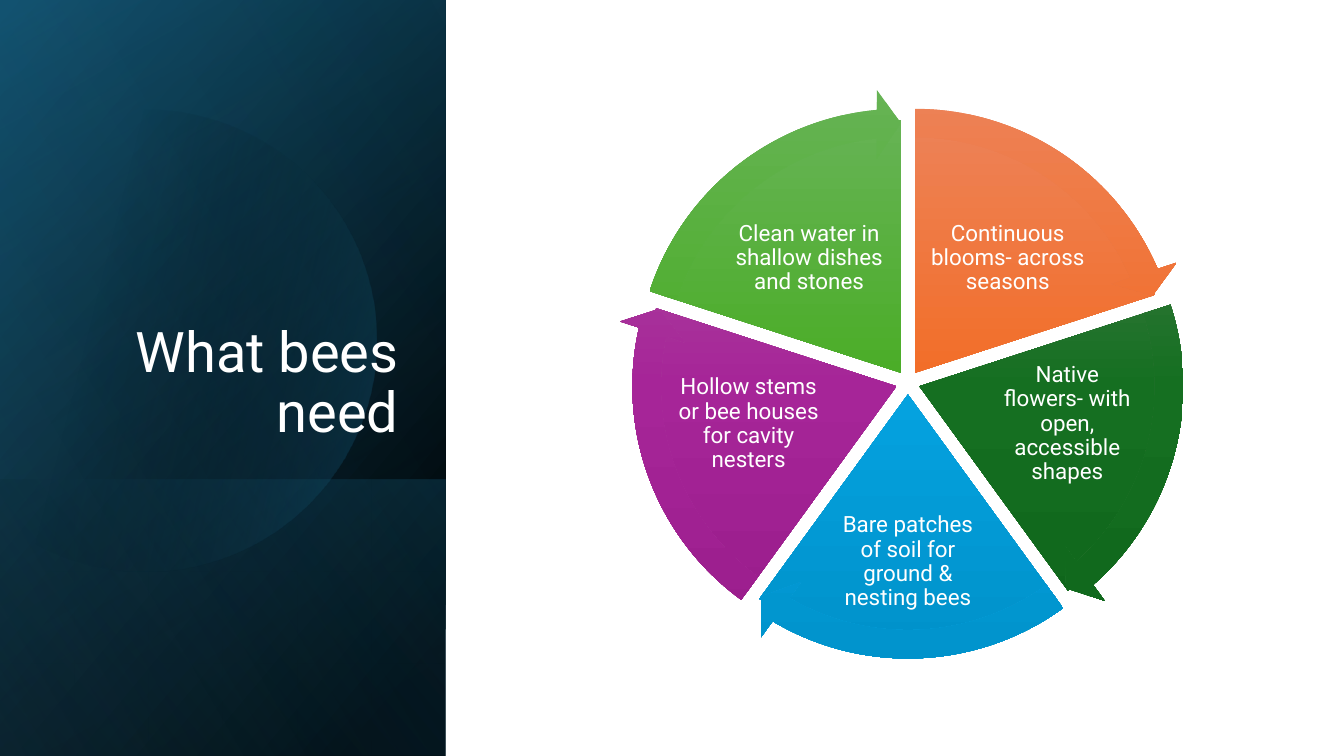
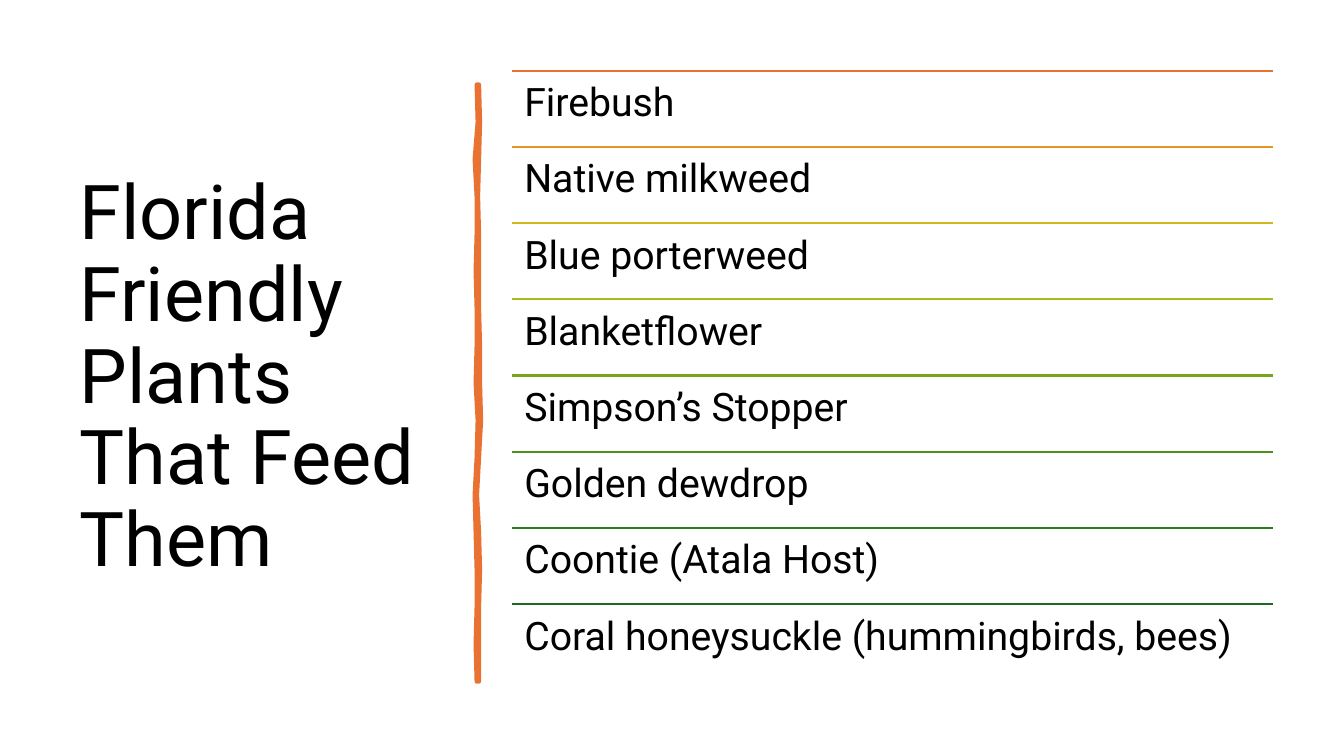
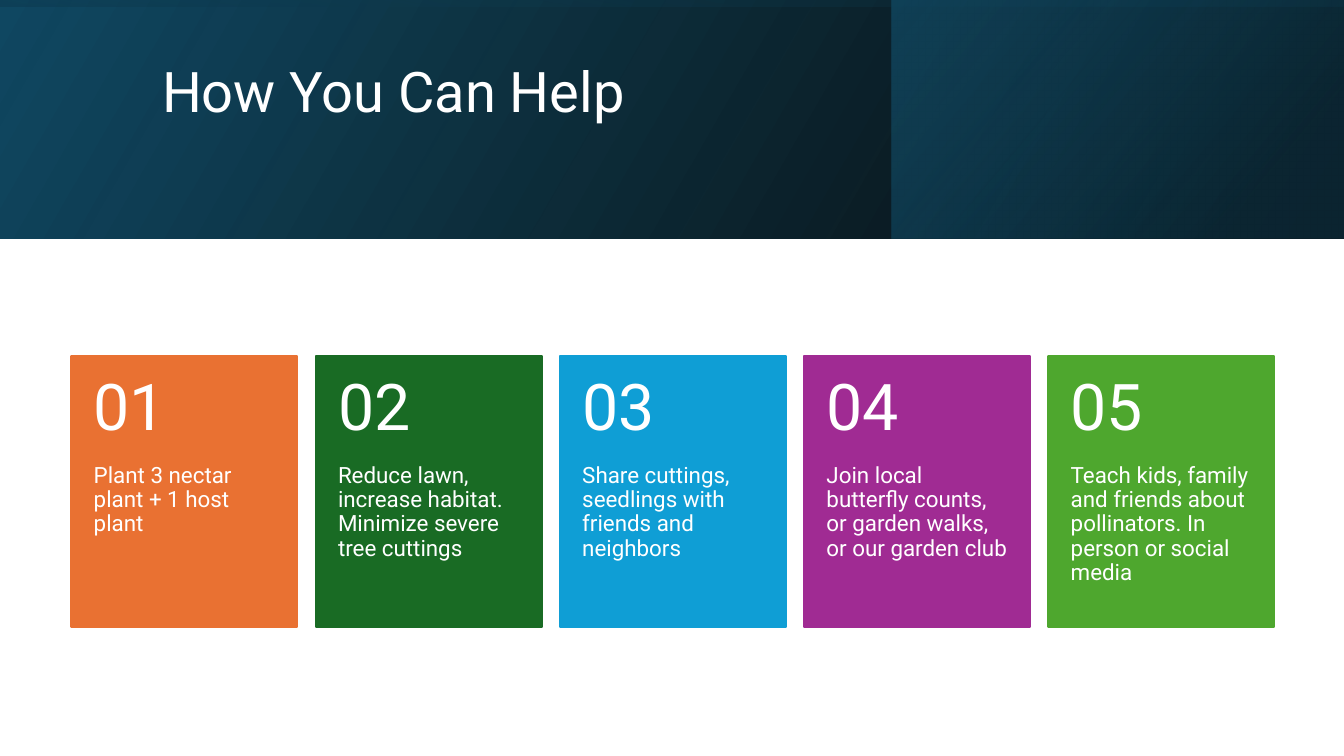
import math

import lxml.etree
import pptx
import pptx.dml.color
import pptx.enum.shapes
import pptx.enum.text
import pptx.oxml.ns
import pptx.util

Inches = pptx.util.Inches
SHAPE = pptx.enum.shapes.MSO_SHAPE
ALIGN = pptx.enum.text.PP_ALIGN
ANCHOR = pptx.enum.text.MSO_ANCHOR
FONT = "Roboto"

COLORS = {
    "white": "FFFFFF",
    "black": "000000",
    "navy": "104862",
    "night": "0B3041",
    "teal": "156082",
    "sky": "46B1E1",
    "orange": "E97132",
    "amber": "E49622",
    "gold": "D2B81E",
    "lime": "ABBC1E",
    "grass": "75A71D",
    "leaf": "49931D",
    "moss": "277F1B",
    "forest": "196B24",
    "blue": "0F9ED5",
    "purple": "A02B93",
    "green": "4EA72E",
    "orange light": "ED8257",
    "orange middle": "F26E29",
    "orange deep": "E25F1A",
    "forest light": "4D7E50",
    "forest middle": "156F21",
    "forest deep": "0F661B",
    "blue light": "4CAADF",
    "blue middle": "05A2DF",
    "blue deep": "0092CB",
    "purple light": "AC53A0",
    "purple middle": "A62598",
    "purple deep": "991C8B",
    "green light": "66B354",
    "green middle": "4BAD28",
    "green deep": "409F1E",
}
ACCENTS = ["orange", "forest", "blue", "purple", "green"]

NEEDS = [
    ("Continuous blooms- across seasons", (9.19, 2.03, 1.61, 1.07)),
    ("Native flowers- with open, accessible shapes", (9.84, 3.61, 1.49, 1.19)),
    ("Bare patches of soil for ground & nesting bees", (8.29, 4.92, 1.43, 1.31)),
    ("Hollow stems or bee houses for cavity nesters", (6.68, 3.61, 1.49, 1.19)),
    ("Clean water in shallow dishes and stones", (7.22, 2.03, 1.61, 1.07)),
]
PLANTS = [
    ("Firebush", "orange"),
    ("Native milkweed", "amber"),
    ("Blue porterweed", "gold"),
    ("Blanketflower", "lime"),
    ("Simpson’s Stopper", "grass"),
    ("Golden dewdrop", "leaf"),
    ("Coontie (Atala Host)", "moss"),
    ("Coral honeysuckle (hummingbirds, bees)", "forest"),
]
ACTIONS = [
    "Plant 3 nectar plant + 1 host plant",
    "Reduce lawn, increase habitat. Minimize severe tree cuttings",
    "Share cuttings, seedlings with friends and neighbors",
    "Join local butterfly counts, or garden walks, or our garden club",
    "Teach kids, family and friends about pollinators. In person or social media",
]


def rgb(name):
    """Return the named colour."""
    return pptx.dml.color.RGBColor.from_string(COLORS[name])


def add_text(slide, text, box, size=16, color="white", align=ALIGN.LEFT,
             anchor=ANCHOR.TOP, insets=(0.1, 0.05, 0.1, 0.05)):
    """Place one formatted paragraph in a wrapped text box."""
    frame = slide.shapes.add_textbox(*map(Inches, box)).text_frame
    frame.word_wrap = True
    frame.vertical_anchor = anchor
    (frame.margin_left, frame.margin_top,
     frame.margin_right, frame.margin_bottom) = map(Inches, insets)
    paragraph = frame.paragraphs[0]
    paragraph.alignment = align
    paragraph.line_spacing = 0.9
    run = paragraph.add_run()
    run.text = text
    run.font.name = FONT
    run.font.size = pptx.util.Pt(size)
    run.font.color.rgb = rgb(color)


def add_title(slide, text, box, size=40, color="white", align=ALIGN.LEFT,
              anchor=ANCHOR.MIDDLE):
    """Place a slide title."""
    add_text(slide, text, box, size=size, color=color, align=align, anchor=anchor)


def fill_gradient(shape, stops, angle):
    """Fill with (position, colour[, opacity]) stops at a clockwise angle."""
    qn = pptx.oxml.ns.qn
    shape.shadow.inherit = False
    shape.line.fill.background()
    shape.fill.gradient()
    gradient = shape.element.spPr.find(qn("a:gradFill"))
    for child in list(gradient):
        gradient.remove(child)
    gradient.set("rotWithShape", "1")
    stop_list = lxml.etree.SubElement(gradient, qn("a:gsLst"))
    for position, color, *opacity in stops:
        stop = lxml.etree.SubElement(stop_list, qn("a:gs"), pos=str(position * 1000))
        value = lxml.etree.SubElement(stop, qn("a:srgbClr"), val=COLORS[color])
        for percent in opacity:
            lxml.etree.SubElement(value, qn("a:alpha"), val=str(percent * 1000))
    lxml.etree.SubElement(gradient, qn("a:lin"), ang=str(angle * 60000), scaled="0")


def add_panel(slide, box, stops, angle, turn=0):
    """Cover the visible box with a mirrored, optionally turned gradient."""
    left, top, width, height = box
    if turn:
        left, top = left + (width - height) / 2, top + (height - width) / 2
        width, height = height, width
    shape = slide.shapes.add_shape(
        SHAPE.RECTANGLE, *map(Inches, (left, top, width, height)))
    shape.rotation = turn
    shape.element.spPr.get_or_add_xfrm().set("flipH", "1")
    fill_gradient(shape, stops, angle)


def add_outline(slide, points):
    """Build a closed outline from points in inches."""
    start, *others = [(Inches(x), Inches(y)) for x, y in points]
    builder = slide.shapes.build_freeform(*start, scale=1.0)
    builder.add_line_segments(others, close=True)
    shape = builder.convert_to_shape()
    shape.shadow.inherit = False
    return shape


def add_side_band(slide, box):
    """Layer the dark side band with its faint disc."""
    left, top, width, height = box
    add_panel(slide, box, [(8, "black"), (100, "navy")], 50, turn=90)
    add_panel(slide, box, [(0, "black", 0), (99, "teal", 46)], 30, turn=90)
    add_panel(slide, (left, top + height - 2.74, width, 2.74),
              [(2, "teal", 29), (100, "black", 30)], 130, turn=90)
    radius, offset = 2.29, 1.44
    limit = math.degrees(math.acos(-offset / radius))
    angles = [math.radians(limit * step / 60) for step in range(-60, 61)]
    disc = add_outline(slide, [(left + offset + radius * math.cos(angle),
                                top + 3.38 + radius * math.sin(angle))
                               for angle in angles])
    fill_gradient(disc, [(29, "black", 0), (100, "teal", 43)], 14)
    add_panel(slide, box, [(0, "black", 0), (99, "sky", 11)], 120, turn=90)


def add_cycle(slide, box):
    """Draw five wedges pushed out from the centre, their labels and arrows."""
    left, top, size = box
    push, rim, sweep = 0.12, 0.31, 72
    arrows = []
    for index, (accent, (text, label_box)) in enumerate(zip(ACCENTS, NEEDS)):
        start = (270 + sweep * index) % 360
        end = (start + sweep) % 360
        middle = math.radians(start + sweep / 2)
        x = left + push * math.cos(middle)
        y = top + push * math.sin(middle)
        stops = [(0, accent + " light"), (50, accent + " middle"), (100, accent + " deep")]
        wedge = slide.shapes.add_shape(SHAPE.PIE, *map(Inches, (x, y, size, size)))
        wedge.adjustments[0] = start * 0.6
        wedge.adjustments[1] = end * 0.6
        fill_gradient(wedge, stops, 90)
        add_text(slide, text, label_box, align=ALIGN.CENTER, anchor=ANCHOR.MIDDLE,
                 insets=(0.02, 0.02, 0.02, 0.02))
        arrows.append((x - rim, y - rim, start * 0.6, end * 0.6, stops))
    for x, y, start, end, stops in arrows:
        arrow = slide.shapes.add_shape(
            SHAPE.CIRCULAR_ARROW, *map(Inches, (x, y, size + 2 * rim, size + 2 * rim)))
        for index, value in enumerate((0.05, 3.28, end - 3.28, start, 0.06)):
            arrow.adjustments[index] = value
        fill_gradient(arrow, stops, 90)


def add_brush_stroke(slide, box):
    """Draw a hand-drawn vertical stroke."""
    left, top, width, height = box
    right_wobble = [0, 0.01, 0, -0.01, 0, 0, 0, 0.01, 0.01, 0.02, 0, -0.02, 0, 0.01, 0, 0, 0]
    left_wobble = [0, 0.01, -0.02, 0, 0, -0.01, 0, 0, -0.01, 0.01, 0, -0.02, -0.01, 0, 0, -0.01, 0]
    step = height / (len(right_wobble) - 1)
    edge = [(left + width + shift, top + step * index)
            for index, shift in enumerate(right_wobble)]
    edge += reversed([(left + shift, top + step * index)
                      for index, shift in enumerate(left_wobble)])
    stroke = add_outline(slide, edge)
    stroke.fill.solid()
    stroke.fill.fore_color.rgb = rgb("orange")
    stroke.line.color.rgb = rgb("orange")
    stroke.line.width = pptx.util.Pt(3.25)


def add_ruled_list(slide, box):
    """Stack the plants in equal rows, each under a coloured rule."""
    left, top, width, height = box
    row = height / len(PLANTS)
    for index, (plant, color) in enumerate(PLANTS):
        y = top + row * index
        rule = slide.shapes.add_connector(
            pptx.enum.shapes.MSO_CONNECTOR.STRAIGHT,
            *map(Inches, (left, y, left + width, y)))
        rule.line.color.rgb = rgb(color)
        rule.line.width = pptx.util.Pt(1.5)
        lxml.etree.SubElement(rule.element.spPr, pptx.oxml.ns.qn("a:effectLst"))
        add_text(slide, plant, (left, y, width, row), size=28, color="black",
                 insets=(0.12, 0.12, 0.12, 0.12))


def add_top_band(slide, box):
    """Layer the dark band across the top."""
    left, top, width, height = box
    add_panel(slide, box, [(0, "black", 96), (100, "navy")], 330)
    add_panel(slide, (left + 8.84, top, width - 8.84, height),
              [(19, "night", 68), (100, "teal", 48)], 320)
    add_panel(slide, box, [(23, "navy", 16), (99, "black", 45)], 350, turn=270)


def add_card(slide, box, number, text, color):
    """Draw a card with a number above its text."""
    left, top, width, height = box
    head = height * 0.4
    card = slide.shapes.add_shape(SHAPE.RECTANGLE, *map(Inches, box))
    card.shadow.inherit = False
    card.fill.solid()
    card.fill.fore_color.rgb = rgb(color)
    card.line.color.rgb = rgb(color)
    card.line.width = pptx.util.Pt(1.5)
    add_text(slide, text, (left, top + head, width, height - head),
             insets=(0.22, 0, 0.22, 0.36))
    add_text(slide, f"{number:02d}", (left, top, width, head), size=46,
             anchor=ANCHOR.MIDDLE, insets=(0.22, 0.18, 0.22, 0.18))


def add_card_row(slide, box):
    """Spread the cards evenly across the box."""
    left, top, width, height = box
    card_width = 2.24
    step = (width - card_width) / (len(ACTIONS) - 1)
    for index, (text, color) in enumerate(zip(ACTIONS, ACCENTS)):
        add_card(slide, (left + step * index, top, card_width, height),
                 index + 1, text, color)


def build_needs(slide):
    """Build the slide on what bees need."""
    add_side_band(slide, (0, 0, 4.42, 7.5))
    add_title(slide, "What bees need", (0.64, 1.84, 3.41, 2.62),
              align=ALIGN.RIGHT, anchor=ANCHOR.BOTTOM)
    add_cycle(slide, (6.5, 1.29, 5.01))


def build_plants(slide):
    """Build the slide listing plants."""
    add_title(slide, "Florida Friendly Plants That Feed Them",
              (0.69, 0.7, 3.74, 6.11), size=54, color="black")
    add_brush_stroke(slide, (4.73, 0.84, 0.02, 5.92))
    add_ruled_list(slide, (5.08, 0.7, 7.55, 6.05))


def build_actions(slide):
    """Build the slide of ways to help."""
    add_top_band(slide, (0, 0, 13.33, 2.37))
    add_title(slide, "How You Can Help", (1.51, 0.38, 10.63, 1.12))
    add_card_row(slide, (0.71, 3.53, 11.93, 2.69))


def main():
    """Build and save the presentation."""
    presentation = pptx.Presentation()
    presentation.slide_width = Inches(13.33)
    presentation.slide_height = Inches(7.5)
    for build in (build_needs, build_plants, build_actions):
        build(presentation.slides.add_slide(presentation.slide_layouts[6]))
    presentation.save("out.pptx")


if __name__ == "__main__":
    main()
